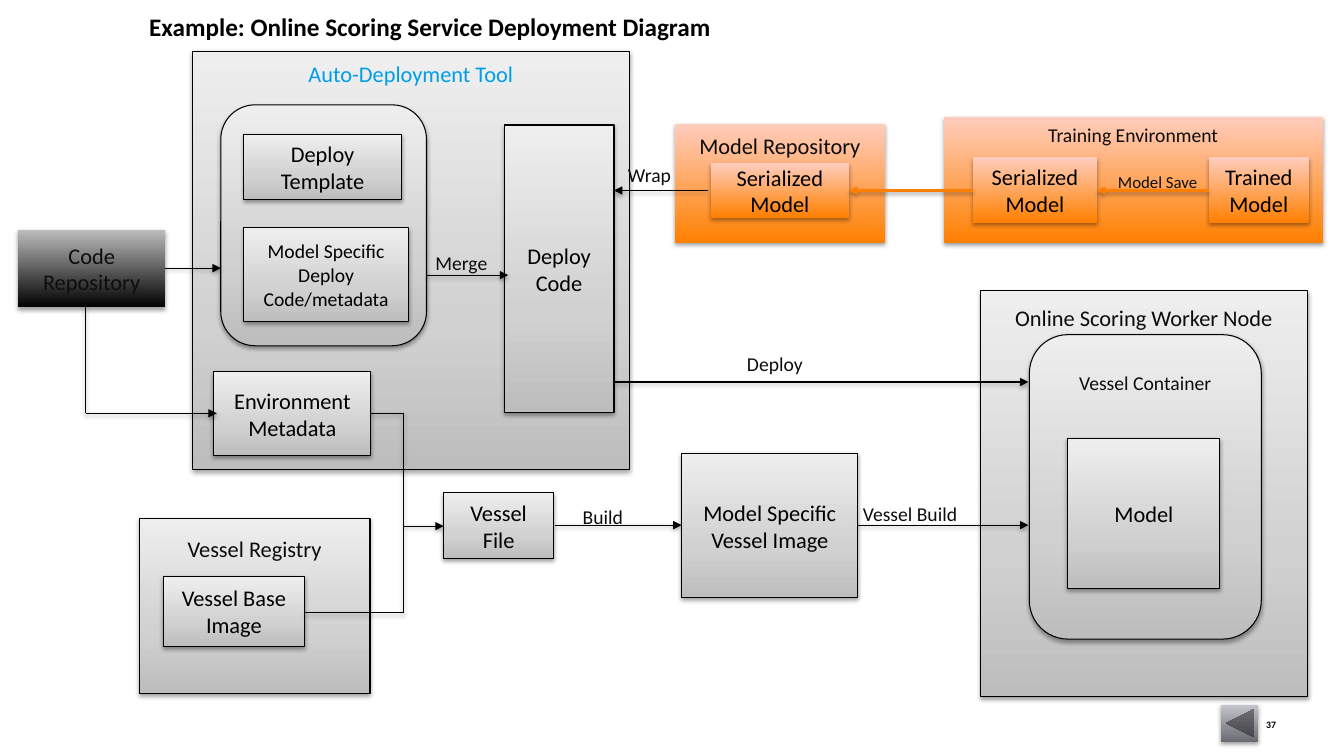
"""Build the online scoring service deployment diagram slide."""
from dataclasses import dataclass
from copy import deepcopy
from typing import Any

from lxml.etree import SubElement
from pptx import Presentation
from pptx.dml.color import RGBColor
from pptx.enum.shapes import MSO_CONNECTOR, MSO_SHAPE
from pptx.enum.text import MSO_ANCHOR, MSO_AUTO_SIZE, PP_ALIGN
from pptx.oxml.ns import qn
from pptx.util import Inches, Pt

Gradient = tuple[tuple[float, str], ...]


@dataclass(frozen=True)
class Theme:
    """Colours, gradients and type sizes of the slide."""
    font: str = "Calibri"
    black: str = "000000"
    ink: str = "0D0D0D"
    blue: str = "009EE6"
    orange: str = "FF8000"
    gray: Gradient = ((0, "BDBDBD"), (0.35, "D1D1D1"), (1, "EEEEEE"))
    warm: Gradient = ((0, "FF8000"), (1, "FFCDBD"))
    dark: Gradient = ((0, "000000"), (1, "BDBDBD"))
    steel: Gradient = ((0, "6A6B73"), (1, "C5C6CB"))
    title: int = 18
    large: int = 16
    medium: int = 14
    small: int = 12
    tiny: int = 7
    thin: float = 0.75
    thick: float = 2


THEME = Theme()
CELL = Inches(0.1)
Area = tuple[float, float, float, float]


@dataclass(frozen=True)
class Block:
    """A filled shape; a head inset in rows puts its text at the top."""
    text: str
    area: Area
    fill: Gradient = THEME.gray
    size: int = THEME.large
    color: str = THEME.black
    head: float | None = None
    kind: MSO_SHAPE = MSO_SHAPE.RECTANGLE


@dataclass(frozen=True)
class Label:
    """Free text in a box on the grid."""
    text: str
    area: Area
    size: int = THEME.medium
    color: str = THEME.ink
    bold: bool = False


@dataclass(frozen=True)
class Route:
    """A chain of straight lines through grid points."""
    points: tuple[tuple[float, float], ...]
    arrow: bool = True
    color: str = THEME.black
    width: float = THEME.thin


ROUND = MSO_SHAPE.ROUNDED_RECTANGLE
TITLE = Label("Example: Online Scoring Service Deployment Diagram",
              (13.8, 0.6, 69.8, 4), THEME.title, THEME.black, True)
BLOCKS = (
    Block("Training Environment", (93.6, 11.6, 37.6, 12.5), THEME.warm, THEME.medium, THEME.ink, 0.6),
    Block("Model Repository", (66.9, 12.3, 20.9, 11.8), THEME.warm, color=THEME.ink, head=0.8),
    Block("Serialized Model", (70.5, 16.2, 13.7, 5.4), THEME.warm),
    Block("Auto-Deployment Tool", (19.1, 5.1, 43.3, 41.5), color=THEME.blue, head=0.9),
    Block("Environment Metadata", (21.2, 36.9, 15.6, 8.3)),
    Block("Deploy Code", (50, 12.4, 10.9, 28.5)),
    Block("Code Repository", (1.8, 22.8, 14.6, 7.7), THEME.dark, color=THEME.ink),
    Block("Online Scoring Worker Node", (97.2, 28.8, 32.5, 40.3), color=THEME.ink, head=1.4),
    Block("Vessel Registry", (13.8, 51.4, 22.9, 17.4), color=THEME.ink, head=1.7),
    Block("Vessel File", (44, 48.9, 10.9, 6.5)),
    Block("Vessel Base Image", (16.2, 57.2, 14, 6.9)),
    Block("Model Specific Vessel Image", (67.6, 45, 17.5, 14.3)),
    Block("", (21.9, 10.4, 20.4, 23.9), kind=ROUND),
    Block("Vessel Container", (102.1, 33.2, 23, 30.2), size=THEME.medium,
          color=THEME.ink, head=2.5, kind=ROUND),
    Block("Model", (105.9, 43.5, 15.1, 14.9)),
    Block("", (121.1, 69.9, 3.7, 3.7), THEME.steel, kind=MSO_SHAPE.ACTION_BUTTON_BACK_OR_PREVIOUS),
    Block("Deploy Template", (24.2, 13.3, 15.6, 6.5)),
    Block("Model Specific Deploy Code/metadata", (24.2, 22.6, 16.3, 9.3), size=THEME.medium),
    Block("Trained Model", (119.9, 15.6, 9.9, 6.5), THEME.warm),
    Block("Serialized Model", (96.5, 15.6, 12.3, 6.5), THEME.warm),
)
ROUTES = (
    Route(((16.4, 26.6), (21.9, 26.6))),
    Route(((42.3, 27.3), (50.4, 27.3))),
    Route(((36.8, 41), (40, 41), (40, 60.8), (30.2, 60.8)), arrow=False),
    Route(((40, 52.2), (44, 52.2))),
    Route(((70.2, 18.9), (60.9, 18.9))),
    Route(((60.9, 37.9), (102, 37.9))),
    Route(((55, 52.1), (67.6, 52.1))),
    Route(((85.1, 52.1), (102, 52.1))),
    Route(((8.5, 30.5), (8.5, 41), (21.5, 41))),
    Route(((119.9, 18.9), (108.8, 18.9)), color=THEME.orange, width=THEME.thick),
    Route(((96.5, 18.9), (84.2, 18.9)), color=THEME.orange, width=THEME.thick),
)
LABELS = (
    Label("Merge", (42.2, 24.4, 8, 3.4)),
    Label("Deploy", (73.1, 34.4, 9.2, 3.4)),
    Label("Vessel Build", (84.6, 49.3, 13.6, 3.4)),
    Label("Wrap", (61.3, 15.7, 9.2, 3.4)),
    Label("Build", (56.8, 49.6, 7.2, 3.4)),
    Label("Model Save", (109.9, 16.5, 10, 3), THEME.small),
    Label("37", (124.6, 70.8, 3.9, 2), THEME.tiny, THEME.black, True),
)


def apply(target: Any, values: dict[str, Any]) -> None:
    """Set each named attribute of the target."""
    for name, value in values.items():
        setattr(target, name, value)


def grid(*cells: float) -> list[int]:
    """Turn grid cells into slide lengths."""
    return [round(cell * CELL) for cell in cells]


def write(shape: Any, item: Block | Label, align: PP_ALIGN, frame: dict[str, Any]) -> None:
    """Put the item's text in the shape with its format."""
    apply(shape.text_frame, {"text": item.text, "word_wrap": True, **frame})
    para = shape.text_frame.paragraphs[0]
    para.alignment = align
    span = para.runs[0]
    apply(span.font, {"name": THEME.font, "size": Pt(item.size), "bold": getattr(item, "bold", False)})
    span.font.color.rgb = RGBColor.from_string(item.color)


def add_shadow(effects: Any) -> None:
    """Add a soft downward shadow to an effect list."""
    shadow = SubElement(effects, qn("a:outerShdw"), blurRad="40000", dist="21000",
                        dir="5400000", rotWithShape="0")
    color = SubElement(shadow, qn("a:srgbClr"), val=THEME.black)
    SubElement(color, qn("a:alpha"), val="37000")


def paint(shape: Any, gradient: Gradient) -> None:
    """Fill the shape with a gradient that rises from the bottom."""
    shape.fill.gradient()
    shape.fill.gradient_angle = 90
    stops = shape._element.spPr.find(".//" + qn("a:gsLst"))
    for _ in gradient[2:]:
        stops.append(deepcopy(stops[0]))
    for stop, (position, color) in zip(shape.fill.gradient_stops, gradient):
        stop.position = position
        stop.color.rgb = RGBColor.from_string(color)


def draw_block(page: Any, block: Block) -> None:
    """Draw a filled box with its text."""
    box = page.shapes.add_shape(block.kind, *grid(*block.area))
    paint(box, block.fill)
    if block.fill is THEME.gray:
        box.line.color.rgb = RGBColor.from_string(THEME.black)
        box.line.width = Pt(THEME.thin)
    else:
        box.line.fill.background()
    box.shadow.inherit = False
    add_shadow(box._element.spPr.find(qn("a:effectLst")))
    if block.text:
        frame = {"vertical_anchor": MSO_ANCHOR.MIDDLE}
        if block.head is not None:
            frame = {"vertical_anchor": MSO_ANCHOR.TOP, "margin_top": grid(block.head)[0]}
        write(box, block, PP_ALIGN.CENTER, frame)


def draw_route(page: Any, route: Route) -> None:
    """Draw the lines of a route, with an arrowhead on the last."""
    for start, end in zip(route.points, route.points[1:]):
        line = page.shapes.add_connector(MSO_CONNECTOR.STRAIGHT, *grid(*start, *end))
        line.line.color.rgb = RGBColor.from_string(route.color)
        line.line.width = Pt(route.width)
        if route.arrow and end == route.points[-1]:
            SubElement(line.line._get_or_add_ln(), qn("a:tailEnd"), type="triangle")
        add_shadow(SubElement(line._element.spPr, qn("a:effectLst")))


def main() -> None:
    """Build and save the deck."""
    deck = Presentation()
    apply(deck, {"slide_width": Inches(13.33), "slide_height": Inches(7.5)})
    page = deck.slides.add_slide(deck.slide_layouts[5])
    frame = {"vertical_anchor": MSO_ANCHOR.TOP, "auto_size": MSO_AUTO_SIZE.NONE}
    title = page.shapes.title
    apply(title, dict(zip(("left", "top", "width", "height"), grid(*TITLE.area))))
    write(title, TITLE, PP_ALIGN.LEFT, frame)
    for block in BLOCKS:
        draw_block(page, block)
    for route in ROUTES:
        draw_route(page, route)
    for label in LABELS:
        write(page.shapes.add_textbox(*grid(*label.area)), label, PP_ALIGN.LEFT, frame)
    deck.save("out.pptx")


if __name__ == "__main__":
    main()
